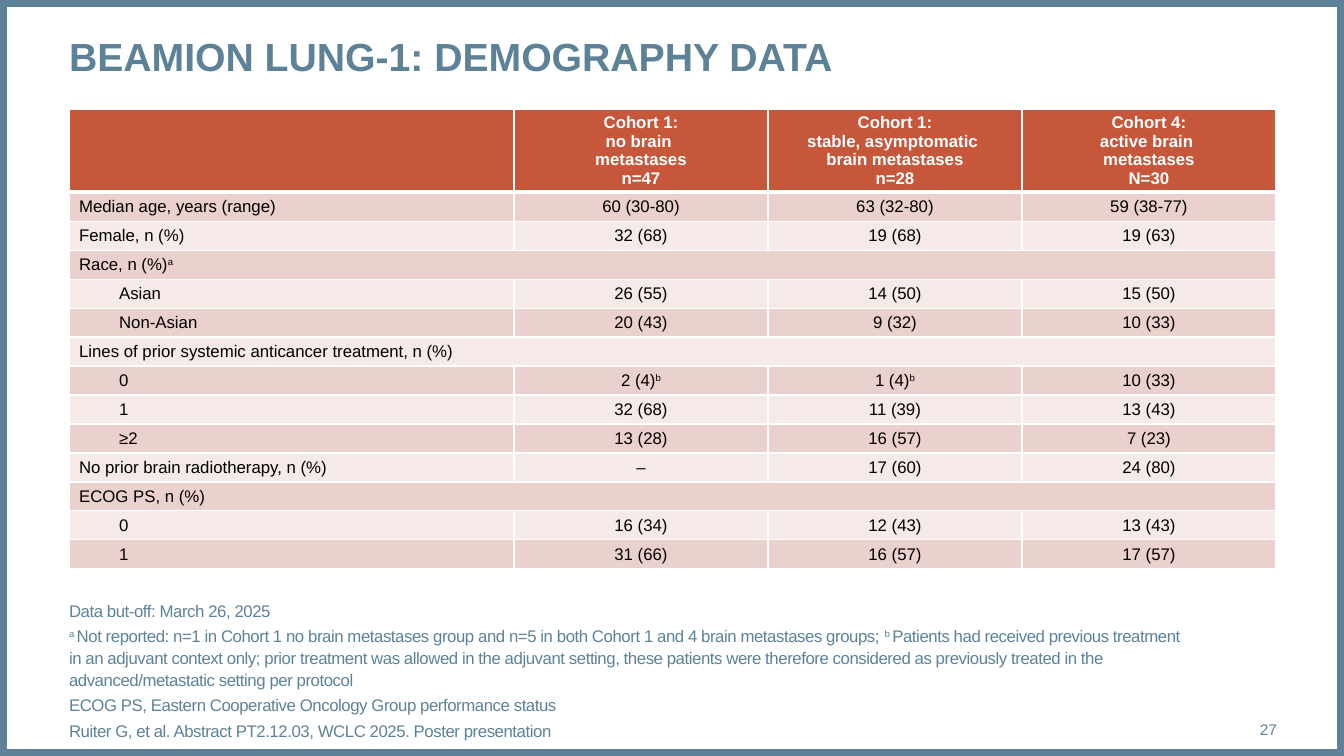
from dataclasses import dataclass

from lxml.etree import SubElement
from pptx import Presentation
from pptx.dml.color import RGBColor
from pptx.enum.shapes import MSO_SHAPE as Shape
from pptx.enum.text import MSO_ANCHOR as Anchor, PP_ALIGN as Align
from pptx.oxml.ns import qn
from pptx.util import Emu, Pt

SLIDE_W, SLIDE_H = 1344, 756
EMU_PER_PX = 12192000 / SLIDE_W


@dataclass(frozen=True)
class Theme:
    """Colours, font and type sizes of the slide."""
    font: str = "Arial"
    slate: str = "5D8298"
    rust: str = "C6573B"
    bands: tuple = ("EAD1CE", "F5EAE8")
    white: str = "FFFFFF"
    black: str = "000000"
    title_size: int = 28
    text_size: int = 12
    number_size: int = 11


THEME = Theme()
COLUMNS = (445, 254, 254, 254)
HEADER_H, ROW_H = 83, 29
CELL_PAD, SUBROW_INDENT = 4, 40

COHORTS = (
    "",
    "Cohort 1:\nno brain \nmetastases\nn=47",
    "Cohort 1:\nstable, asymptomatic \nbrain metastases\nn=28",
    "Cohort 4:\nactive brain \nmetastases\nN=30",
)
DEMOGRAPHY = (
    (0, "Median age, years (range)", "60 (30-80)", "63 (32-80)", "59 (38-77)"),
    (0, "Female, n (%)", "32 (68)", "19 (68)", "19 (63)"),
    (0, "Race, n (%)^a"),
    (1, "Asian", "26 (55)", "14 (50)", "15 (50)"),
    (1, "Non-Asian", "20 (43)", "9 (32)", "10 (33)"),
    (0, "Lines of prior systemic anticancer treatment, n (%)"),
    (1, "0", "2 (4)^b", "1 (4)^b", "10 (33)"),
    (1, "1", "32 (68)", "11 (39)", "13 (43)"),
    (1, "≥2", "13 (28)", "16 (57)", "7 (23)"),
    (0, "No prior brain radiotherapy, n (%)", "–", "17 (60)", "24 (80)"),
    (0, "ECOG PS, n (%)"),
    (1, "0", "16 (34)", "12 (43)", "13 (43)"),
    (1, "1", "31 (66)", "16 (57)", "17 (57)"),
)
FOOTNOTES = (
    "Data but-off: March 26, 2025",
    "^a ^Not reported: n=1 in Cohort 1 no brain metastases group and n=5 in both "
    "Cohort 1 and 4 brain metastases groups; ^b ^Patients had received previous "
    "treatment in an adjuvant context only; prior treatment was allowed in the "
    "adjuvant setting, these patients were therefore considered as previously "
    "treated in the advanced/metastatic setting per protocol",
    "ECOG PS, Eastern Cooperative Oncology Group performance status",
    "Ruiter G, et al. Abstract PT2.12.03, WCLC 2025. Poster presentation",
)


def px(length):
    """Turn pixels into EMU."""
    return Emu(round(length * EMU_PER_PX))


def apply(target, values):
    """Set each attribute in a dict of format values."""
    for name, value in values.items():
        setattr(target, name, value)


def write(paragraph, text, size, color, bold=False, tracking=0, **layout):
    """Write text in which every second ^ part is superscript."""
    apply(paragraph, layout)
    for index, part in enumerate(text.split("^")):
        for line_index, line in enumerate(part.split("\n")):
            if line_index:
                paragraph.add_line_break()
            if not line:
                continue
            run = paragraph.add_run()
            run.text = line
            apply(run.font, {"name": THEME.font, "size": Pt(size), "bold": bold})
            run.font.color.rgb = RGBColor.from_string(color)
            properties = run._r.get_or_add_rPr()
            if index % 2:
                properties.set("baseline", "30000")
            if tracking:
                properties.set("spc", str(tracking))
    for line_break in paragraph._p.findall(qn("a:br")):
        SubElement(line_break, qn("a:rPr"), sz=str(size * 100))


def frame_text(shape, box, anchor):
    """Place a text shape without margins and return its frame."""
    apply(shape, dict(zip(("left", "top", "width", "height"), map(px, box))))
    apply(shape.text_frame, {
        "margin_left": 0, "margin_top": 0, "margin_right": 0, "margin_bottom": 0,
        "word_wrap": True, "vertical_anchor": anchor})
    return shape.text_frame


def add_frame(slide, box):
    """Draw the border around the slide."""
    border = slide.shapes.add_shape(Shape.RECTANGLE, *map(px, box))
    border.shadow.inherit = False
    border.fill.background()
    border.line.width = Pt(10)
    border.line.color.rgb = RGBColor.from_string(THEME.slate)


def add_title(slide, box):
    """Fill the title placeholder."""
    heading = frame_text(slide.shapes.title, box, Anchor.TOP)
    write(heading.paragraphs[0], "BEAMION LUNG-1: DEMOGRAPHY DATA", THEME.title_size,
          THEME.slate, bold=True, alignment=Align.LEFT, line_spacing=1.1)


def style_cell(cell, fill, edges):
    """Give a cell its borders, fill and margins."""
    properties = cell._tc.get_or_add_tcPr()
    for side, points in edges.items():
        edge = SubElement(properties, qn(f"a:ln{side}"), w=str(Pt(points)))
        paint = SubElement(edge, qn("a:solidFill"))
        SubElement(paint, qn("a:srgbClr"), val=THEME.white)
    cell.fill.solid()
    cell.fill.fore_color.rgb = RGBColor.from_string(fill)
    apply(cell, {"margin_top": px(CELL_PAD), "margin_bottom": px(CELL_PAD),
                 "vertical_anchor": Anchor.MIDDLE})


def add_demography(slide, left, top):
    """Build the table of patient characteristics by cohort."""
    height = HEADER_H + ROW_H * len(DEMOGRAPHY)
    table = slide.shapes.add_table(
        len(DEMOGRAPHY) + 1, len(COLUMNS),
        *map(px, (left, top, sum(COLUMNS), height))).table
    for column, width in zip(table.columns, COLUMNS):
        column.width = px(width)
    for index, row in enumerate(table.rows):
        row.height = px(ROW_H if index else HEADER_H)
        fill = THEME.bands[(index - 1) % 2] if index else THEME.rust
        edges = {"L": 1, "R": 1, "T": 3 if index == 1 else 1, "B": 1 if index else 3}
        for cell in row.cells:
            style_cell(cell, fill, edges)

    for column, cohort in enumerate(COHORTS):
        write(table.cell(0, column).text_frame.paragraphs[0], cohort, THEME.text_size,
              THEME.white, bold=True, alignment=Align.CENTER)
    for index, (level, *values) in enumerate(DEMOGRAPHY, 1):
        if len(values) == 1:
            table.cell(index, 0).merge(table.cell(index, len(COLUMNS) - 1))
        for column, value in enumerate(values):
            paragraph = table.cell(index, column).text_frame.paragraphs[0]
            write(paragraph, value, THEME.text_size, THEME.black,
                  alignment=Align.CENTER if column else Align.LEFT)
            if level and not column:
                paragraph._p.get_or_add_pPr().set("indent", str(px(SUBROW_INDENT)))


def add_footnotes(slide, box):
    """Stack the footnotes upwards from the bottom of the box."""
    notes = frame_text(slide.shapes.add_textbox(0, 0, 0, 0), box, Anchor.BOTTOM)
    for index, note in enumerate(FOOTNOTES):
        paragraph = notes.add_paragraph() if index else notes.paragraphs[0]
        write(paragraph, note, THEME.text_size, THEME.slate, tracking=-30,
              space_before=Pt(3 if index else 0), line_spacing=1.07)


def add_page_number(slide, box):
    """Write the page number at the right of the box."""
    number = frame_text(slide.shapes.add_textbox(0, 0, 0, 0), box, Anchor.MIDDLE)
    write(number.paragraphs[0], "27", THEME.number_size, THEME.slate, alignment=Align.RIGHT)


def main():
    """Build the slide and save it."""
    deck = Presentation()
    apply(deck, {"slide_width": px(SLIDE_W), "slide_height": px(SLIDE_H)})
    slide = deck.slides.add_slide(deck.slide_layouts[5])
    add_frame(slide, (0, 0, SLIDE_W, SLIDE_H))
    add_title(slide, (69, 28, 1208, 95))
    add_demography(slide, 69, 109)
    add_footnotes(slide, (69, 701, 1122, 40))
    add_page_number(slide, (1190, 709, 87, 40))
    deck.save("out.pptx")


if __name__ == "__main__":
    main()
